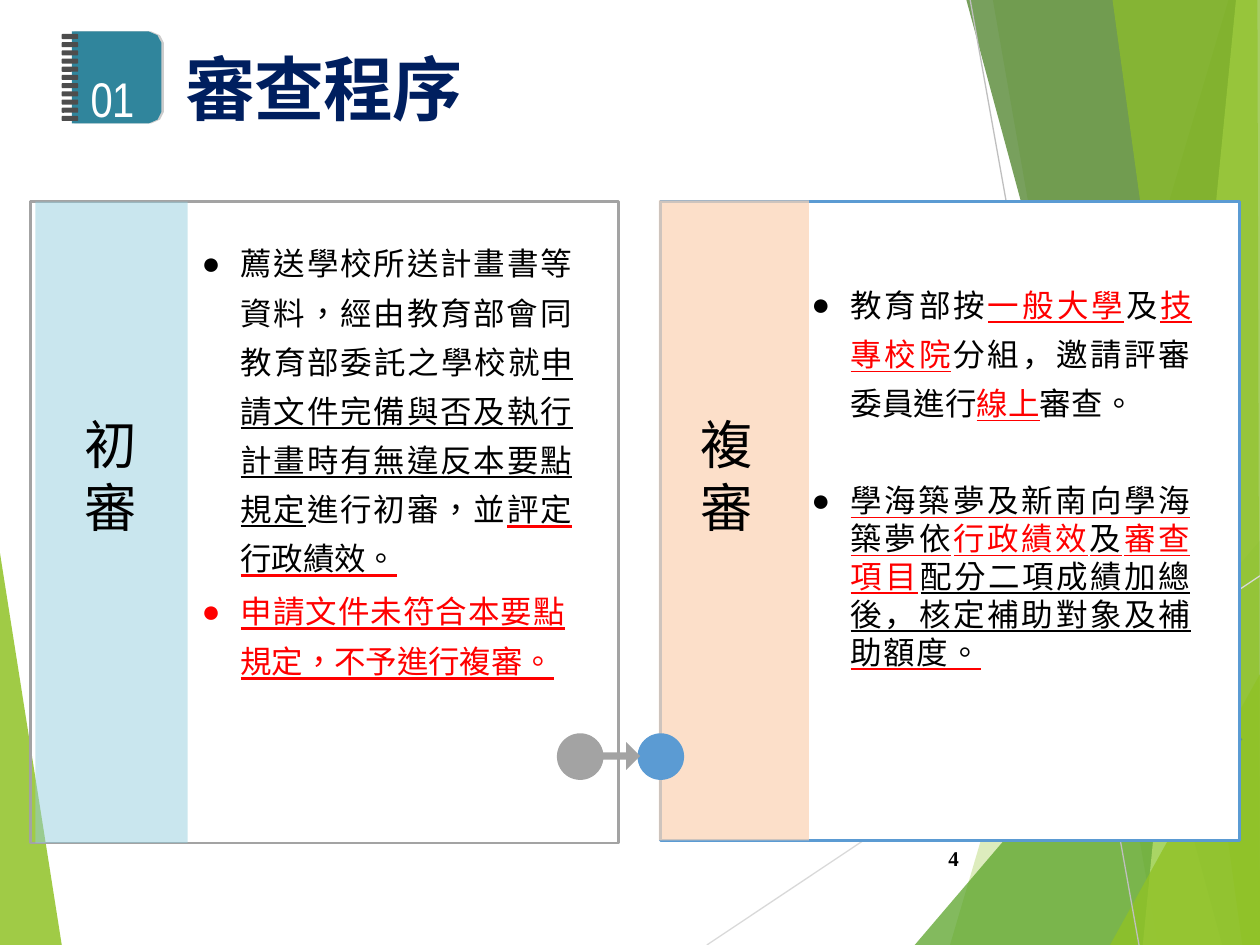
from pptx import Presentation
from pptx.dml.color import RGBColor
from pptx.enum.shapes import MSO_CONNECTOR, MSO_SHAPE
from pptx.enum.text import MSO_ANCHOR, MSO_AUTO_SIZE, PP_ALIGN
from pptx.oxml.ns import qn
from pptx.util import Inches, Pt
from lxml import etree

RECT, OVAL = MSO_SHAPE.RECTANGLE, MSO_SHAPE.OVAL
ROUNDED, ARROW = MSO_SHAPE.ROUNDED_RECTANGLE, MSO_SHAPE.RIGHT_ARROW
STRAIGHT = MSO_CONNECTOR.STRAIGHT
JUSTIFY, LEFT, RIGHT = PP_ALIGN.JUSTIFY, PP_ALIGN.LEFT, PP_ALIGN.RIGHT

CJK = "Noto Sans CJK JP"
BLACK, RED, GRAY, BLUE = "000000", "FF0000", "A3A3A3", "5B9BD3"
COMPARISON_LAYOUT = 4
UNITS = 100  # freeform units per inch

# Background facets: colour, opacity in percent, corners
LEFT_FACET = ("90C226", 85, [(0, 4.39), (0.49, 7.5), (0, 7.5)])
RIGHT_FACETS = [
    ("90C226", 30, [(9.75, 0), (10, 0), (10, 7.5), (7.54, 7.5)]),
    ("90C226", 20, [(7.88, 0), (10, 0), (10, 7.5), (9.19, 7.5)]),
    ("54A021", 72, [(10, 4.29), (10, 7.5), (7.26, 7.5)]),
    ("3F7819", 70, [(7.67, 0), (10, 0), (10, 7.5), (9.7, 7.5)]),
    ("C0E474", 70, [(9.81, 0), (10, 0), (10, 7.5), (9.07, 7.5)]),
    ("90C226", 65, [(8.83, 0), (9.98, 0), (10, 7.5), (9.86, 7.5)]),
    ("90C226", 80, [(10, 5.35), (10, 7.5), (8.81, 7.5)]),
    ("4470C4", 50, [(9.55, 5.5), (9.27, 5.73), (9.58, 6.1), (9.86, 5.87)]),
]

# Runs: text, letter spacing, colour, then optional underline colour, heavy, language
FIRST_REVIEW = [
    dict(ls=1.3, sb=1.1, runs=[
        ("薦送學校所送計畫書等", 0.6, BLACK),
        ("資料，經由教育部會同", 0.7, BLACK),
        ("教育部委託之學校就", 0.8, BLACK),
        ("申", -0.5, BLACK, BLACK),
        (" ", 5, BLACK, BLACK),
        ("請文件完備與否及執行計畫時有無違反本要點", 0.6, BLACK, BLACK),
        ("規定", 0.8, BLACK, BLACK),
        ("進行初審，並", 0.8, BLACK),
        ("評定", 0.7, BLACK, RED, True),
        ("行政績效。", -0.1, BLACK, RED, True)]),
    dict(sb=8.8, runs=[("申請文件未符合本要點", 0.6, RED, RED, True)]),
    dict(sb=7, bullet=False, align=LEFT,
         runs=[("規定，不予進行複審。", -0.1, RED, RED, True)]),
]
SECOND_REVIEW = [
    dict(ls=1.3, sb=1.4, runs=[
        ("教育部按", 1.4, BLACK),
        ("一般大學", 1.6, RED, RED),
        ("及", 1.2, BLACK),
        ("技", -0.5, RED, RED),
        (" ", 1.5, RED, RED),
        ("專校院", 1.4, RED, RED),
        ("分組，邀請評審", 1.2, BLACK, None, False, "ja-JP"),
        ("委員進行", 0, BLACK),
        ("線上", 0, RED, RED),
        ("審查。", 0.3, BLACK)]),
    dict(sb=34, runs=[
        ("學海築夢及新南向學海", 1, BLACK, RED),
        (" 築夢依", 1.4, BLACK, RED),
        ("行政績效", 1.1, RED, RED),
        ("及", 1.5, BLACK, RED),
        ("審查", 1.2, RED, RED),
        ("項目", 1.6, RED, RED),
        ("配分二項成績加總", 1, BLACK, BLACK),
        ("後，核定補助對象及補", 0.8, BLACK, BLACK, False, "ja-JP"),
        ("助額度。", 0.9, BLACK, RED)]),
]


def rgb(value):
    return RGBColor.from_string(value)


def paint(sp, fill=None, opacity=100, line=None):
    sp.shadow.inherit = False
    if fill:
        sp.fill.solid()
        sp.fill.fore_color.rgb = rgb(fill)
        if opacity < 100:
            clr = sp.element.spPr.find(".//" + qn("a:srgbClr"))
            etree.SubElement(clr, qn("a:alpha"), val=str(opacity * 1000))
    else:
        sp.fill.background()
    if line:
        sp.line.color.rgb = rgb(line)
        sp.line.width = Pt(1.56)
    else:
        sp.line.fill.background()


def add_shape(s, kind, x, y, w, h, **style):
    sp = s.shapes.add_shape(kind, Inches(x), Inches(y), Inches(w), Inches(h))
    paint(sp, **style)
    return sp


def add_polygon(s, points, fill, opacity=100):
    corners = [(round(x * UNITS), round(y * UNITS)) for x, y in points]
    builder = s.shapes.build_freeform(*corners[0], scale=Inches(1) / UNITS)
    builder.add_line_segments(corners[1:], close=True)
    paint(builder.convert_to_shape(), fill, opacity)


def add_line(s, x1, y1, x2, y2, color):
    line = s.shapes.add_connector(STRAIGHT, *map(Inches, (x1, y1, x2, y2)))
    line.line.color.rgb = rgb(color)
    line.line.width = Pt(0.75)
    etree.SubElement(line.element.spPr, qn("a:effectLst"))


def place(sp, x, y, w, h, anchor=MSO_ANCHOR.TOP):
    """Position a text shape and bring it to the front."""
    sp.left, sp.top, sp.width, sp.height = map(Inches, (x, y, w, h))
    tree = sp.element.getparent()
    tree.append(sp.element)
    tf = sp.text_frame
    tf.margin_left = tf.margin_right = tf.margin_bottom = 0
    tf.margin_top = Inches(0.01)
    tf.word_wrap, tf.auto_size = True, MSO_AUTO_SIZE.NONE
    tf.vertical_anchor = anchor
    return tf


def format_paragraph(p, align=LEFT, sb=0, ls=1.0, margin=0.01, indent=0, bullet=False):
    p.alignment, p.space_before, p.line_spacing = align, Pt(sb), ls
    pPr = p._p.get_or_add_pPr()
    pPr.set("marL", str(Inches(margin)))
    pPr.set("indent", str(Inches(indent)))
    if bullet:
        etree.SubElement(pPr, qn("a:buChar"), char="●")
    else:
        etree.SubElement(pPr, qn("a:buNone"))
    return pPr


def add_run(p, text, spacing, color, underline=None, heavy=False, lang="zh-TW",
            size=18, font=CJK, bold=False):
    r = p.add_run()
    r.text = text
    r.font.size, r.font.name, r.font.bold = Pt(size), font, bold
    r.font.color.rgb = rgb(color)
    rPr = r.font._element
    rPr.set("lang", lang)
    rPr.set("spc", str(round(spacing * 100)))
    latin = rPr.find(qn("a:latin"))
    latin.addnext(etree.Element(qn("a:ea"), typeface=font))
    if underline:
        rPr.set("u", "heavy" if heavy else "sng")
        u_fill = etree.Element(qn("a:uFill"))
        solid = etree.SubElement(u_fill, qn("a:solidFill"))
        etree.SubElement(solid, qn("a:srgbClr"), val=underline)
        latin.addprevious(u_fill)
    return r


def fill_list(sp, items, *box):
    tf = place(sp, *box)
    for i, item in enumerate(items):
        p = tf.add_paragraph() if i else tf.paragraphs[0]
        bullet = item.get("bullet", True)
        format_paragraph(p, item.get("align", JUSTIFY), item["sb"], item.get("ls", 1.0),
                         0.33, -0.31 if bullet else 0, bullet)
        for run in item["runs"]:
            add_run(p, *run)


def fill_label(sp, text, x):
    p = place(sp, x, 3.26, 0.44, 1.03).paragraphs[0]
    format_paragraph(p, sb=1)
    add_run(p, text, -0.5, BLACK, size=30)


def draw_background(s):
    for color, opacity, points in [LEFT_FACET] + RIGHT_FACETS:
        add_polygon(s, points, color, opacity)
    add_line(s, 5.61, 7.5, 10, 4.57, "D9D9D9")
    add_line(s, 7.7, 0, 9.04, 7.5, "BFBFBF")


def draw_panels(s):
    add_shape(s, RECT, 0.24, 1.6, 4.67, 5.09, line=GRAY)
    add_shape(s, RECT, 0.28, 1.6, 1.21, 5.09, fill="92CDDD", opacity=49)
    add_shape(s, RECT, 6.42, 1.6, 3.41, 5.07, fill="FFFFFF")
    add_shape(s, RECT, 5.24, 1.6, 4.6, 5.07, line=BLUE)
    add_shape(s, RECT, 5.23, 1.59, 1.19, 5.08, fill="FBD4B5", opacity=72)
    # Link between the two stages
    for x, color in ((4.42, GRAY), (5.06, BLUE)):
        add_shape(s, OVAL, x, 5.82, 0.37, 0.37, fill=color)
    arrow = add_shape(s, ARROW, 4.73, 5.89, 0.35, 0.22, fill=GRAY)
    arrow.adjustments[0] = 0.27


def draw_notebook(s):
    for x, color in ((0.59, "CCCCCC"), (0.57, "30859C")):
        right = x + 0.71
        add_polygon(s, [(x, 0.25), (right - 0.1, 0.25), (right - 0.03, 0.28),
                        (right, 0.34), (right, 0.89), (right - 0.03, 0.95),
                        (right - 0.1, 0.98), (x, 0.98)], color)
    for i in range(11):
        add_shape(s, ROUNDED, 0.49, 0.27 + 0.065 * i, 0.13, 0.04, fill="4D4D4D")


def fill_title(sp):
    p = place(sp, 0.71, 0.24, 2.97, 0.69).paragraphs[0]
    pPr = format_paragraph(p, sb=0.9)
    tab = str(Inches(0.75))
    pPr.set("defTabSz", tab)
    tabs = etree.SubElement(pPr, qn("a:tabLst"))
    etree.SubElement(tabs, qn("a:tab"), pos=tab, algn="l")
    number = add_run(p, "01\t", -0.4, "FFFFFF", size=48, font="Arial Narrow")
    number.font._element.set("baseline", "-2000")
    add_run(p, "審查程序", -0.45, "001F5F", size=40, bold=True)


def add_page_number(s):
    sp = s.shapes.add_textbox(0, 0, 0, 0)
    p = place(sp, 7.05, 6.61, 0.56, 0.4, MSO_ANCHOR.MIDDLE).paragraphs[0]
    format_paragraph(p, RIGHT, ls=Pt(14.1), margin=0.12)
    add_run(p, "4", 0, BLACK, size=12, font="Times New Roman", bold=True)


def main():
    prs = Presentation()
    prs.slide_width, prs.slide_height = Inches(10), Inches(7.5)
    s = prs.slides.add_slide(prs.slide_layouts[COMPARISON_LAYOUT])
    draw_background(s)
    draw_panels(s)
    draw_notebook(s)
    # Headings and lists of the two stages
    title, label_1, list_1, label_2, list_2 = list(s.placeholders)
    fill_list(list_1, FIRST_REVIEW, 1.58, 1.84, 2.97, 3.58)
    fill_label(label_1, "初審", 0.66)
    fill_label(label_2, "複審", 5.55)
    fill_list(list_2, SECOND_REVIEW, 6.42, 2.17, 3.04, 3.17)
    fill_title(title)
    add_page_number(s)
    prs.save("out.pptx")


if __name__ == "__main__":
    main()
